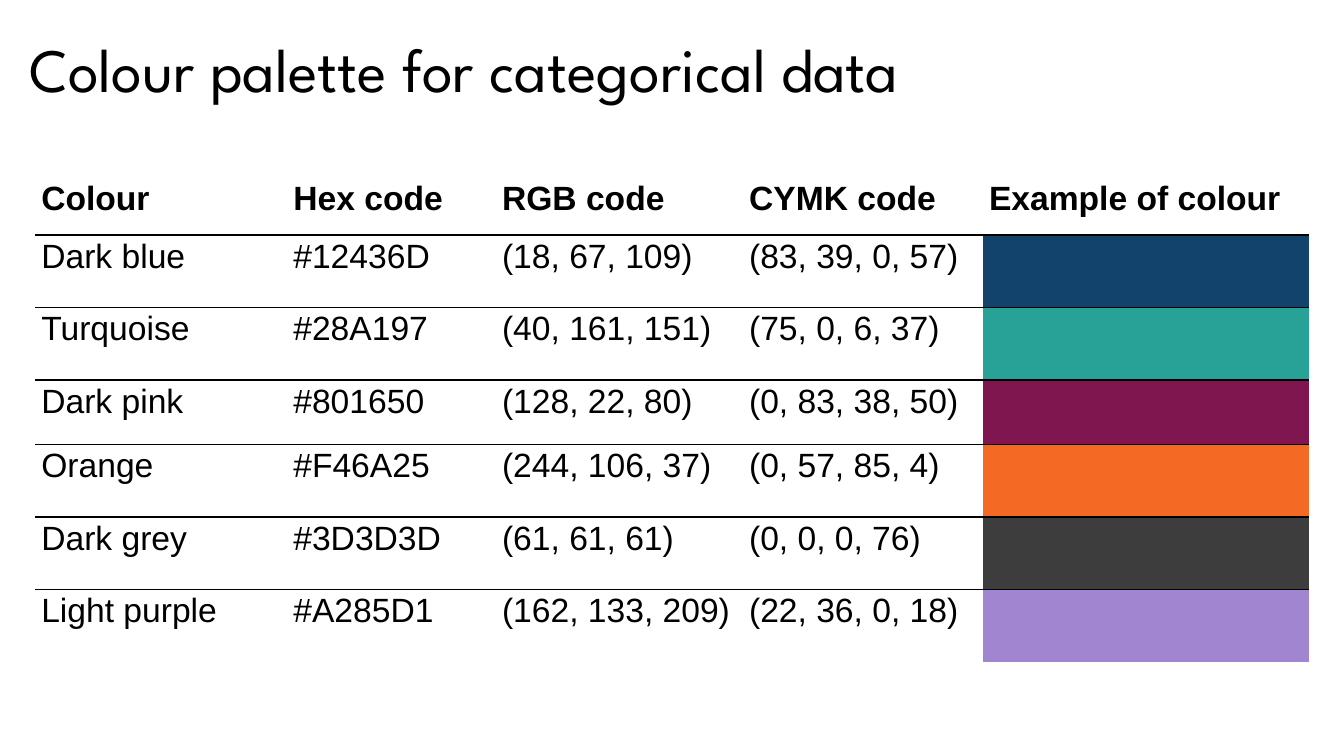
from pptx import Presentation
from pptx.dml.color import RGBColor
from pptx.enum.text import MSO_ANCHOR as Anchor, MSO_AUTO_SIZE as AutoSize, PP_ALIGN as Align
from pptx.oxml.ns import qn
from pptx.util import Inches, Pt
from lxml import etree

BLACK = RGBColor(0, 0, 0)
DARK_BLUE = RGBColor(0x12, 0x43, 0x6D)
TURQUOISE = RGBColor(0x28, 0xA1, 0x97)
DARK_PINK = RGBColor(0x80, 0x16, 0x50)
ORANGE = RGBColor(0xF4, 0x6A, 0x25)
DARK_GREY = RGBColor(0x3D, 0x3D, 0x3D)
LIGHT_PURPLE = RGBColor(0xA2, 0x85, 0xD1)

NO_STYLE_NO_GRID = "{2D5ABB26-0587-4C30-8999-92F81FD0307C}"
HEADERS = ["Colour", "Hex code", "RGB code", "CYMK code", "Example of colour"]
PALETTE = [
    ("Dark blue", DARK_BLUE, (83, 39, 0, 57)),
    ("Turquoise", TURQUOISE, (75, 0, 6, 37)),
    ("Dark pink", DARK_PINK, (0, 83, 38, 50)),
    ("Orange", ORANGE, (0, 57, 85, 4)),
    ("Dark grey", DARK_GREY, (0, 0, 0, 76)),
    ("Light purple", LIGHT_PURPLE, (22, 36, 0, 18)),
]
COL_WIDTHS = [2.5, 2.07, 2.45, 2.38, 3.23]
ROW_HEIGHTS = [0.72, 0.72, 0.72, 0.64, 0.72, 0.72, 0.72]


def set_font(p, name, size, bold=False):
    for r in p.runs:
        r.font.name = name
        r.font.size = Pt(size)
        r.font.bold = bold
        r.font.color.rgb = BLACK


def set_title(s, text):
    sp = s.shapes.title
    sp.left, sp.top, sp.width, sp.height = map(Inches, (0.19, 0, 13.15, 1.1))
    tf = sp.text_frame
    tf.text = text
    tf.auto_size = AutoSize.NONE
    tf.vertical_anchor = Anchor.BOTTOM
    p = tf.paragraphs[0]
    p.alignment = Align.LEFT
    p.line_spacing = 0.9
    p.space_before, p.space_after = Pt(11), Pt(6)
    set_font(p, "League Spartan", 44)


def set_borders(cell, top, bottom):
    """Rule the top and bottom edges with the given point widths; 0 means no line."""
    tc_pr = cell._tc.get_or_add_tcPr()
    for tag, width in (("a:lnL", 0), ("a:lnR", 0), ("a:lnT", top), ("a:lnB", bottom)):
        ln = etree.SubElement(tc_pr, qn(tag), w=str(Pt(width)))
        if width:
            fill = etree.SubElement(ln, qn("a:solidFill"))
            etree.SubElement(fill, qn("a:srgbClr"), val=str(BLACK))
        else:
            etree.SubElement(ln, qn("a:noFill"))


def set_text(cell, text, bold):
    cell.text_frame.text = text
    cell.margin_left = cell.margin_right = Inches(0.06)
    cell.margin_top = cell.margin_bottom = Inches(0.03)
    cell.vertical_anchor = Anchor.MIDDLE if bold else Anchor.TOP
    set_font(cell.text_frame.paragraphs[0], "Arial", 24, bold)


def add_palette_table(s):
    rows = [HEADERS] + [
        [name, f"#{color}", str(tuple(color)), str(cymk), color]
        for name, color, cymk in PALETTE
    ]
    frame = s.shapes.add_table(len(rows), len(HEADERS), Inches(0.35), Inches(1.61),
                               Inches(sum(COL_WIDTHS)), Inches(sum(ROW_HEIGHTS)))
    table = frame.table
    table.first_row = table.horz_banding = False
    table._tbl.tblPr.find(qn("a:tableStyleId")).text = NO_STYLE_NO_GRID
    for col, width in zip(table.columns, COL_WIDTHS):
        col.width = Inches(width)
    for row, height in zip(table.rows, ROW_HEIGHTS):
        row.height = Inches(height)

    # A heavier rule under the header, thin rules between the colours
    rules = [0, 1.5] + [1] * (len(rows) - 2) + [0]
    for i, values in enumerate(rows):
        for j, value in enumerate(values):
            cell = table.cell(i, j)
            set_borders(cell, rules[i], rules[i + 1])
            if isinstance(value, RGBColor):
                cell.fill.solid()
                cell.fill.fore_color.rgb = value
            else:
                cell.fill.background()
                set_text(cell, value, bold=i == 0)


def main():
    prs = Presentation()
    prs.slide_width, prs.slide_height = Inches(13.33), Inches(7.5)
    s = prs.slides.add_slide(prs.slide_layouts[5])
    set_title(s, "Colour palette for categorical data")
    add_palette_table(s)
    prs.save("out.pptx")


if __name__ == "__main__":
    main()
